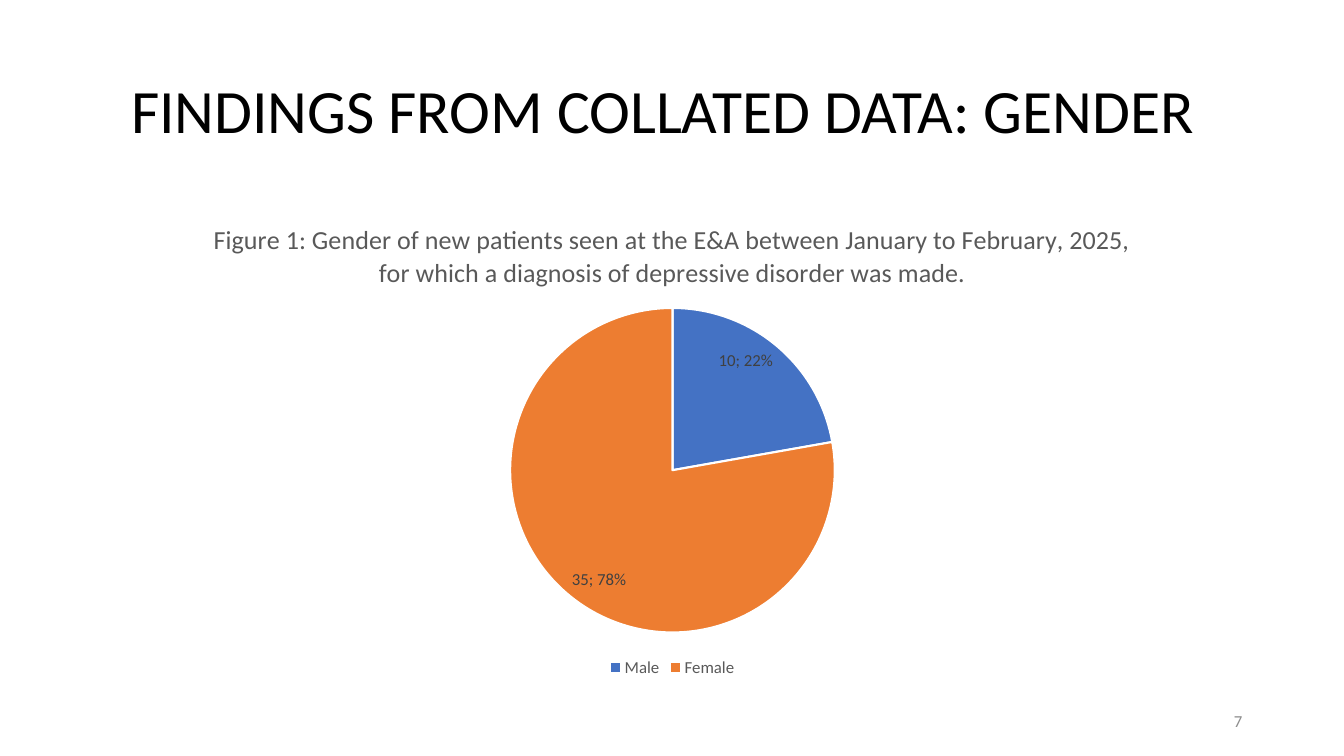
from dataclasses import dataclass

from pptx import Presentation
from pptx.chart.chart import Chart
from pptx.chart.data import CategoryChartData
from pptx.dml.color import RGBColor
from pptx.enum.chart import XL_CHART_TYPE as ChartType
from pptx.enum.chart import XL_LABEL_POSITION as LabelPosition
from pptx.enum.chart import XL_LEGEND_POSITION as LegendPosition
from pptx.enum.text import MSO_ANCHOR as Anchor
from pptx.enum.text import PP_ALIGN as Align
from pptx.oxml import parse_xml
from pptx.oxml.ns import nsdecls, qn
from pptx.slide import Slide
from pptx.text.text import Font
from pptx.util import Inches, Pt

COLORS = {
    "title": "000000",
    "caption": "595959",
    "label": "404040",
    "number": "8C8C8C",
    "male": "4472C4",
    "female": "ED7D31",
    "border": "FFFFFF",
}
FONT = "Calibri"
CAPTION = (
    "Figure 1: Gender of new patients seen at the E&A between January to "
    "February, 2025, for which a diagnosis of depressive disorder was made."
)


@dataclass
class TextItem:
    text: str
    left: float
    top: float
    width: float
    height: float
    size: float
    color: str
    align: Align
    indent: float = 0.1
    line_spacing: float = 1.0


@dataclass
class Slice:
    name: str
    patients: int
    color: str


TEXTS = [
    TextItem("FINDINGS FROM COLLATED DATA: GENDER", 0.92, 0.4, 11.5, 1.45,
             44, "title", Align.LEFT, indent=0.38, line_spacing=0.9),
    TextItem("7", 9.42, 6.95, 3, 0.4, 12, "number", Align.RIGHT),
]
SLICES = [Slice("Male", 10, "male"), Slice("Female", 35, "female")]


def rgb(name: str) -> RGBColor:
    return RGBColor.from_string(COLORS[name])


def style_font(font: Font, size: float, color: str) -> None:
    font.name = FONT
    font.size = Pt(size)
    font.bold = False
    font.color.rgb = rgb(color)


def add_text(page: Slide, item: TextItem) -> None:
    box = page.shapes.add_textbox(Inches(item.left), Inches(item.top),
                                  Inches(item.width), Inches(item.height))
    frame = box.text_frame
    frame.word_wrap = True
    frame.vertical_anchor = Anchor.MIDDLE
    frame.margin_left = Inches(item.indent)
    frame.text = item.text
    para = frame.paragraphs[0]
    para.alignment = item.align
    para.line_spacing = item.line_spacing
    style_font(para.runs[0].font, item.size, item.color)


def place_plot(chart: Chart, x: float, y: float, w: float, h: float) -> None:
    """Fix the pie's position as fractions of the chart area."""
    area = chart.plots[0]._element.getparent()
    for layout in area.findall(qn("c:layout")):
        area.remove(layout)
    area.insert(0, parse_xml(
        f'<c:layout {nsdecls("c")}><c:manualLayout>'
        '<c:layoutTarget val="inner"/><c:xMode val="edge"/><c:yMode val="edge"/>'
        f'<c:x val="{x}"/><c:y val="{y}"/><c:w val="{w}"/><c:h val="{h}"/>'
        '</c:manualLayout></c:layout>'))


def add_gender_pie(page: Slide, slices: list[Slice]) -> None:
    data = CategoryChartData()
    data.categories = [part.name for part in slices]
    data.add_series("Patients", [part.patients for part in slices])
    chart = page.shapes.add_chart(ChartType.PIE, Inches(0.92), Inches(2),
                                  Inches(11.5), Inches(4.76), data).chart
    style_font(chart.font, 10, "title")
    place_plot(chart, 0.36, 0.22, 0.28, 0.68)

    # Caption above the pie
    chart.has_title = True
    caption = chart.chart_title.text_frame
    caption.text = CAPTION
    style_font(caption.paragraphs[0].runs[0].font, 18.6, "caption")

    # Legend below the pie
    chart.has_legend = True
    chart.legend.position = LegendPosition.BOTTOM
    chart.legend.include_in_layout = False
    style_font(chart.legend.font, 12, "caption")

    # Slice colours
    plot = chart.plots[0]
    plot.vary_by_categories = True
    series = plot.series[0]
    for index, part in enumerate(slices):
        look = series.points[index].format
        look.fill.solid()
        look.fill.fore_color.rgb = rgb(part.color)
        look.line.color.rgb = rgb("border")
        look.line.width = Pt(1.5)

    # Count and share on each slice
    labels = series.data_labels
    labels.show_value = True
    labels.show_percentage = True
    labels.position = LabelPosition.INSIDE_END
    style_font(labels.font, 12, "label")
    separator = parse_xml(f'<c:separator {nsdecls("c")}>; </c:separator>')
    labels._element.find(qn("c:showBubbleSize")).addnext(separator)


def main() -> None:
    deck = Presentation()
    deck.slide_width = Inches(13.33)
    deck.slide_height = Inches(7.5)
    page = deck.slides.add_slide(deck.slide_layouts[6])
    for item in TEXTS:
        add_text(page, item)
    add_gender_pie(page, SLICES)
    deck.save("out.pptx")


if __name__ == "__main__":
    main()
